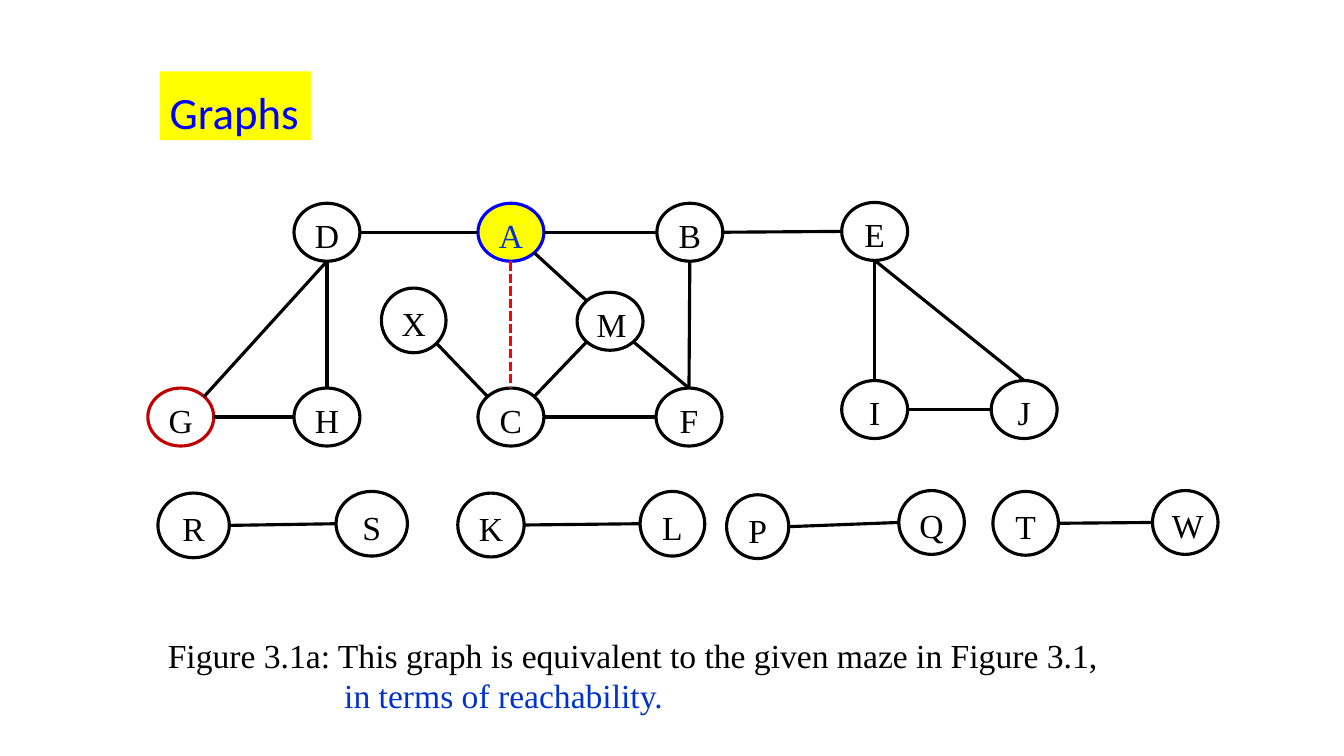
from pptx import Presentation, util as u
from pptx.dml.color import RGBColor
from pptx.enum import dml, shapes, text
from pptx.oxml import parse_xml
from pptx.oxml.ns import nsdecls

WIDTH, HEIGHT = u.Inches(13.33), u.Inches(7.5)
COL, ROW = WIDTH / 160, HEIGHT / 90
BLACK = RGBColor(0x00, 0x00, 0x00)
WHITE = RGBColor(0xFF, 0xFF, 0xFF)
YELLOW = RGBColor(0xFF, 0xFF, 0x00)
BLUE = RGBColor(0x00, 0x00, 0xFF)
ROYAL = RGBColor(0x00, 0x33, 0xCC)
RED = RGBColor(0xFF, 0x00, 0x00)
DARK = RGBColor(0xC0, 0x00, 0x00)
SERIF = "Times New Roman"

NEAR, FAR = 0.146, 0.854
SITES = {
    "N": (0.5, 0), "S": (0.5, 1), "W": (0, 0.5), "E": (1, 0.5),
    "NW": (NEAR, NEAR), "NE": (FAR, NEAR), "SW": (NEAR, FAR), "SE": (FAR, FAR),
}

MAZE = {
    "D": (17.4, 0.1), "A": (39.3, 0.1), "B": (60.6, 0.1), "E": (82.6, 0),
    "G": (0, 22.1), "H": (17.4, 22.1), "C": (39.3, 22.1), "F": (60.5, 22.1),
    "I": (82.6, 21.2), "J": (100.4, 21.2), "M": (51.1, 10.7),
    "X": (27.8, 10.2, 7.7, 7.7),
}
STYLES = {
    "A": {"fill": YELLOW, "line": BLUE, "color": ROYAL},
    "G": {"line": DARK},
}
EDGES = [
    "D S G NE", "D S H N", "G E H W", "C E F W", "B S F N",
    "E S I N", "E S J N", "I E J W", "A E B W", "D E A W", "B E E W",
    "M SE F N", "M SW C NE", "X SE C NW", "A SE M NW",
]
PAIRS = {
    "R": (0, 0.3, 8.5, 7.7), "S": (21.2, 0.1, 8.5, 7.7),
    "K": (35.7, 0.3, 7.9, 7.6), "L": (57.4, 0.1, 7.7, 7.7),
    "P": (67.7, 0.5, 7.4, 7.6), "Q": (88.2, 0, 7.8, 7.6),
    "T": (99.4, 0.1, 7.8, 7.6), "W": (118.4, 0, 7.8, 7.6),
}


def grid(col, row, wide, high):
    """Turn columns and rows into a box in slide units."""
    return [round(n) for n in (col * COL, row * ROW, wide * COL, high * ROW)]


def write(para, words, size=24, font=SERIF, color=BLACK, align=text.PP_ALIGN.LEFT,
          space=1.0, after=0, left=0):
    """Put formatted words in a paragraph."""
    para.alignment, para.line_spacing = align, space
    para.space_before, para.space_after = u.Pt(0), u.Pt(after)
    para._p.get_or_add_pPr().set("marL", str(round(left * COL)))
    run = para.add_run()
    run.text = words
    run.font.size, run.font.name = u.Pt(size), font
    run.font.color.rgb = color


def head(slide, box):
    """Set the title on its yellow label."""
    title = slide.shapes.title
    title.left, title.top, title.width, title.height = grid(*box)
    title.fill.solid()
    title.fill.fore_color.rgb = YELLOW
    frame = title.text_frame
    frame.word_wrap = False
    frame.auto_size = text.MSO_AUTO_SIZE.NONE
    frame.vertical_anchor = text.MSO_ANCHOR.TOP
    write(frame.paragraphs[0], "Graphs", size=32, font="Calibri", color=BLUE, space=1.15)


def node(slide, name, box, fill=WHITE, line=BLACK, color=BLACK):
    """Draw one lettered oval."""
    oval = slide.shapes.add_shape(shapes.MSO_SHAPE.OVAL, *grid(*box))
    oval.shadow.inherit = False
    oval.fill.solid()
    oval.fill.fore_color.rgb = fill
    oval.line.color.rgb, oval.line.width = line, u.Pt(2.25)
    frame = oval.text_frame
    frame.word_wrap = True
    frame.vertical_anchor = text.MSO_ANCHOR.MIDDLE
    write(frame.paragraphs[0], name, color=color, align=text.PP_ALIGN.CENTER,
          space=1.15, after=10)
    return oval


def spot(oval, side):
    """Find the point on an oval at a compass side."""
    across, down = SITES[side]
    return round(oval.left + across * oval.width), round(oval.top + down * oval.height)


def edge(slide, start, out, end, into, color=BLACK, dash=None):
    """Join two ovals with a straight line."""
    link = slide.shapes.add_connector(
        shapes.MSO_CONNECTOR.STRAIGHT, *spot(start, out), *spot(end, into))
    link.line.color.rgb, link.line.width = color, u.Pt(2.25)
    if dash:
        link.line.dash_style = dash
    link._element.spPr.append(parse_xml(f"<a:effectLst {nsdecls('a')}/>"))


def nodes(slide, box, places):
    """Draw a set of ovals offset from the corner of a box."""
    ovals = {}
    for name, (col, row, *size) in places.items():
        area = (box[0] + col, box[1] + row, *(size or (7.85, 6.9)))
        ovals[name] = node(slide, name, area, **STYLES.get(name, {}))
    return ovals


def maze(slide, box):
    """Draw the large graph with its dashed link."""
    ovals = nodes(slide, box, MAZE)
    for item in EDGES:
        start, out, end, into = item.split()
        edge(slide, ovals[start], out, ovals[end], into)
    edge(slide, ovals["A"], "S", ovals["C"], "N", color=RED,
         dash=dml.MSO_LINE.SQUARE_DOT)


def pairs(slide, box):
    """Draw the row of two-node graphs."""
    ovals = list(nodes(slide, box, PAIRS).values())
    for start, end in zip(ovals[::2], ovals[1::2]):
        edge(slide, start, "E", end, "W")


def caption(slide, box):
    """Write the two lines below the graphs."""
    frame = slide.shapes.add_textbox(*grid(*box)).text_frame
    frame.word_wrap = True
    write(frame.paragraphs[0],
          "Figure 3.1a: This graph is equivalent to the given maze in Figure 3.1,")
    write(frame.add_paragraph(), "in terms of reachability.", color=ROYAL, left=21)


def main():
    """Build and save the slide."""
    deck = Presentation()
    deck.slide_width, deck.slide_height = WIDTH, HEIGHT
    slide = deck.slides.add_slide(deck.slide_layouts[5])
    head(slide, (19, 8.5, 18, 8.2))
    maze(slide, (17.6, 24.1))
    pairs(slide, (18.8, 58.4))
    caption(slide, (18.8, 75, 113.5, 10.9))
    deck.save("out.pptx")


if __name__ == "__main__":
    main()
